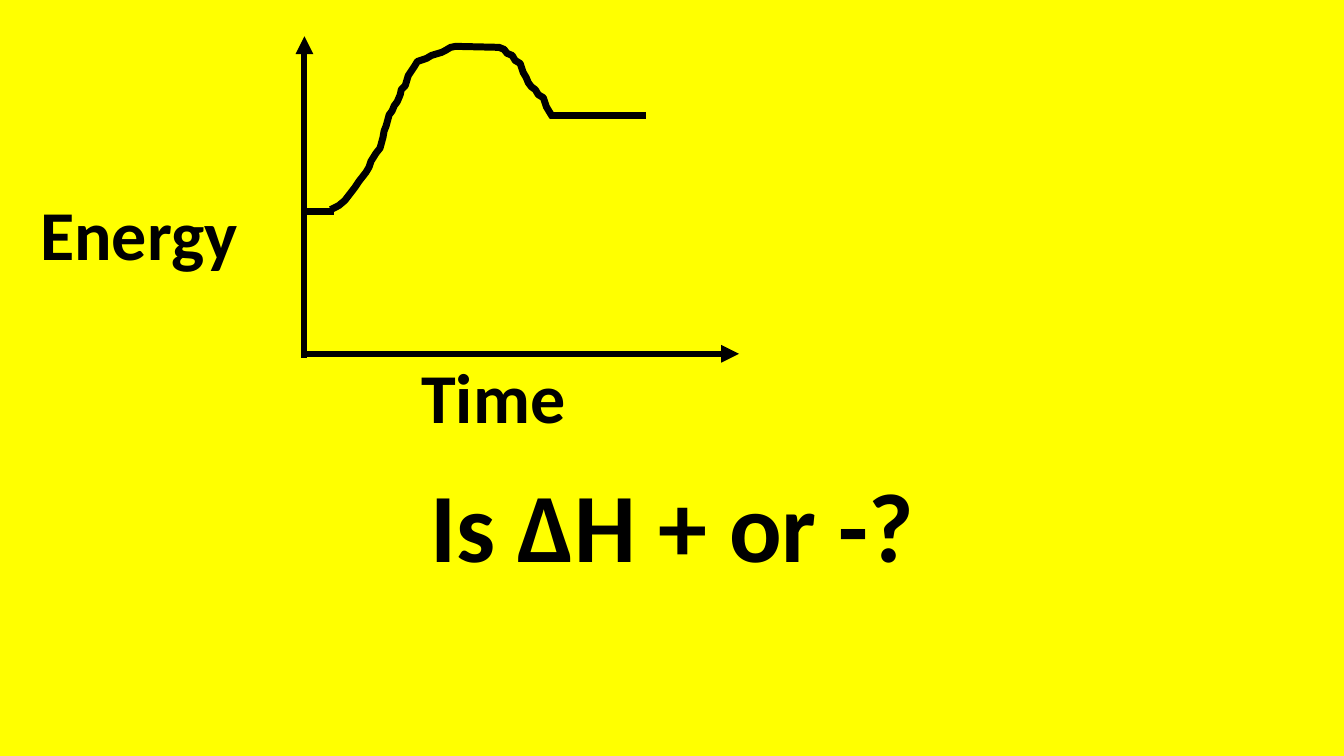
from typing import NamedTuple

from lxml import etree
from pptx import Presentation
from pptx.dml.color import RGBColor
from pptx.enum.shapes import MSO_CONNECTOR
from pptx.enum.text import MSO_ANCHOR, PP_ALIGN
from pptx.oxml.ns import qn
from pptx.slide import Slide
from pptx.util import Inches, Pt

YELLOW = RGBColor(0xFF, 0xFF, 0x00)
BLACK = RGBColor(0x00, 0x00, 0x00)
FONT = "Calibri"
CURVE_WIDTH = 5
AXIS_WIDTH = 4.25


class Label(NamedTuple):
    text: str
    left: float
    top: float
    width: float
    height: float
    size: int
    align: PP_ALIGN = PP_ALIGN.LEFT
    anchor: MSO_ANCHOR = MSO_ANCHOR.TOP
    spacing: float = 1.0


class Line(NamedTuple):
    x1: float
    y1: float
    x2: float
    y2: float
    width: float
    arrow: bool = False


LABELS = [
    Label("Is ∆H + or -?", 0.13, 3, 13.08, 2.84, 70,
          PP_ALIGN.CENTER, MSO_ANCHOR.BOTTOM, 0.9),
    Label("Energy", 0.3, 1.84, 2.31, 0.94, 50),
    Label("Time", 4.08, 3.46, 2.31, 0.94, 50),
]

LINES = [
    Line(3.02, 3.55, 3.02, 0.36, AXIS_WIDTH, arrow=True),
    Line(3.02, 3.51, 7.33, 3.51, AXIS_WIDTH, arrow=True),
    Line(3.02, 2.1, 3.31, 2.1, CURVE_WIDTH),
    Line(5.46, 1.15, 6.41, 1.15, CURVE_WIDTH),
]

ENERGY_CURVE = [
    (3.28, 2.08), (3.36, 2.04), (3.42, 1.99), (3.52, 1.86), (3.56, 1.8),
    (3.63, 1.71), (3.66, 1.66), (3.68, 1.6), (3.73, 1.52), (3.77, 1.47),
    (3.8, 1.36), (3.81, 1.3), (3.83, 1.25), (3.86, 1.14), (3.89, 1.1),
    (3.91, 1.05), (3.94, 1.01), (3.97, 0.94), (3.98, 0.89), (4.02, 0.85),
    (4.05, 0.75), (4.11, 0.66), (4.14, 0.61), (4.23, 0.58), (4.28, 0.55),
    (4.38, 0.52), (4.42, 0.5), (4.47, 0.47), (4.52, 0.46), (4.95, 0.47),
    (5, 0.49), (5.03, 0.53), (5.08, 0.55), (5.11, 0.6), (5.16, 0.63),
    (5.19, 0.72), (5.22, 0.77), (5.24, 0.82), (5.27, 0.86), (5.31, 0.89),
    (5.34, 0.94), (5.39, 0.97), (5.42, 1.06), (5.48, 1.16),
]


def add_label(s: Slide, label: Label) -> None:
    box = s.shapes.add_textbox(Inches(label.left), Inches(label.top),
                               Inches(label.width), Inches(label.height))
    tf = box.text_frame
    tf.word_wrap = True
    tf.vertical_anchor = label.anchor
    p = tf.paragraphs[0]
    p.text = label.text
    p.alignment = label.align
    p.line_spacing = label.spacing
    font = p.runs[0].font
    font.name = FONT
    font.size = Pt(label.size)
    font.bold = True
    font.color.rgb = BLACK


def add_line(s: Slide, line: Line) -> None:
    cxn = s.shapes.add_connector(MSO_CONNECTOR.STRAIGHT,
                                 Inches(line.x1), Inches(line.y1),
                                 Inches(line.x2), Inches(line.y2))
    cxn.line.color.rgb = BLACK
    cxn.line.width = Pt(line.width)
    if line.arrow:
        ln = cxn.line._get_or_add_ln()
        etree.SubElement(ln, qn("a:tailEnd"), type="triangle")
    etree.SubElement(cxn._element.spPr, qn("a:effectLst"))


def add_curve(s: Slide, points: list[tuple[float, float]]) -> None:
    start, *rest = [(Inches(x), Inches(y)) for x, y in points]
    builder = s.shapes.build_freeform(*start)
    builder.add_line_segments(rest, close=False)
    sp = builder.convert_to_shape()
    sp.shadow.inherit = False
    sp.fill.background()
    sp.line.color.rgb = BLACK
    sp.line.width = Pt(CURVE_WIDTH)


def main() -> None:
    prs = Presentation()
    prs.slide_width = Inches(13.33)
    prs.slide_height = Inches(7.5)
    s = prs.slides.add_slide(prs.slide_layouts[6])
    s.background.fill.solid()
    s.background.fill.fore_color.rgb = YELLOW

    for line in LINES:
        add_line(s, line)
    add_curve(s, ENERGY_CURVE)
    for label in LABELS:
        add_label(s, label)
    prs.save("out.pptx")


if __name__ == "__main__":
    main()
